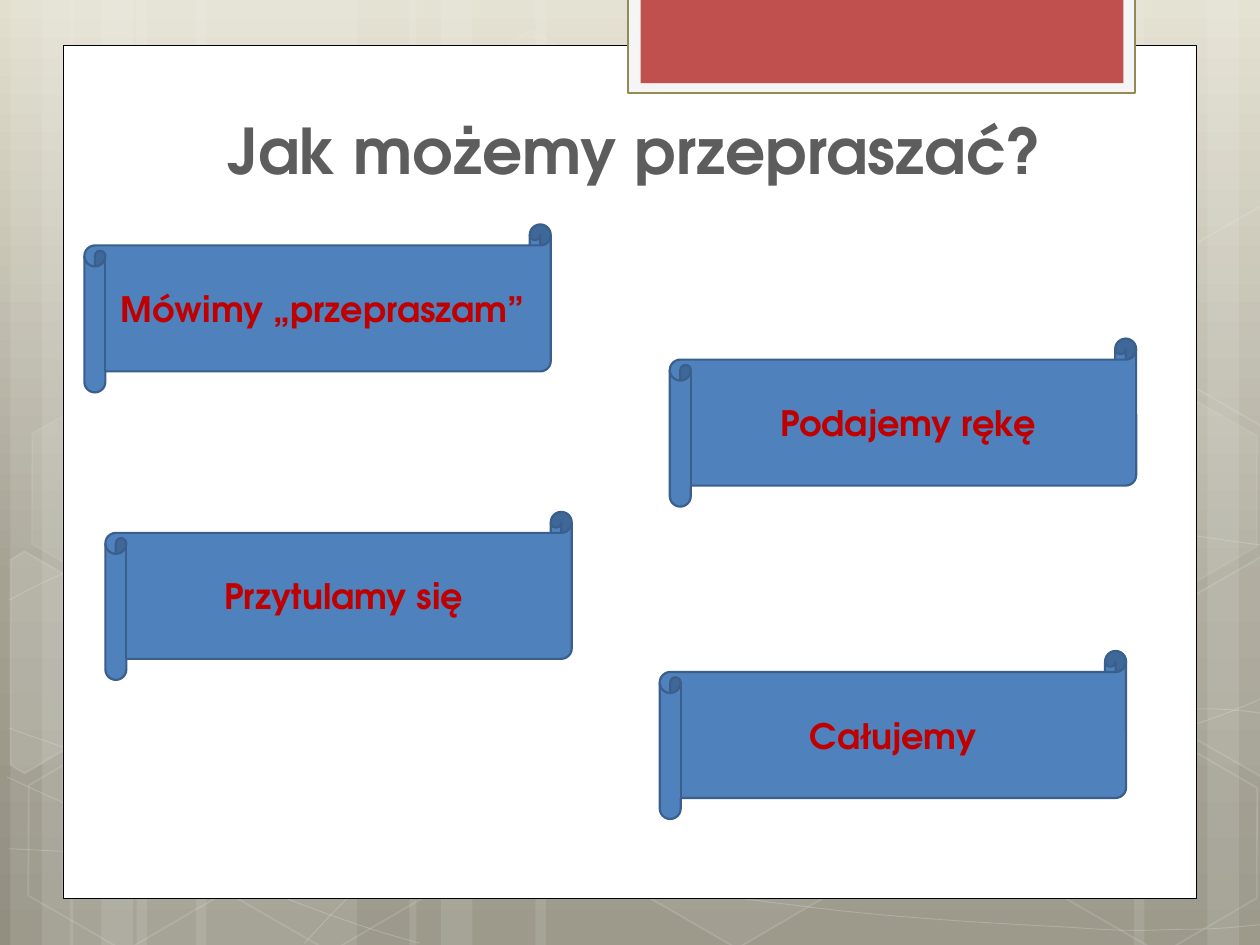
import copy
import math

import pptx
import pptx.dml.color
import pptx.enum.shapes
import pptx.enum.text
import pptx.oxml.ns
import pptx.util

Pt = pptx.util.Pt
RGB = pptx.dml.color.RGBColor
SHAPE = pptx.enum.shapes.MSO_SHAPE
TEXT = pptx.enum.text
qn = pptx.oxml.ns.qn

FONT = "TeX Gyre Adventor"
WHITE = RGB(0xFF, 0xFF, 0xFF)
BLACK = RGB(0x00, 0x00, 0x00)
PALE = RGB(0xF5, 0xF5, 0xF5)
OLIVE = RGB(0x94, 0x8A, 0x54)
BRICK = RGB(0xC0, 0x50, 0x4D)
GREY = RGB(0x5D, 0x5D, 0x5D)
BLUE = RGB(0x4F, 0x81, 0xBD)
NAVY = RGB(0x3A, 0x5F, 0x8C)
RED = RGB(0xC0, 0x00, 0x00)
SKY = [(0, RGB(0xE2, 0xDF, 0xCF)), (0.62, RGB(0xA5, 0xA2, 0x93)),
       (1, RGB(0x92, 0x8F, 0x80))]

WIDE, HIGH = 720, 540
TILT = 30

# Stripe sets: anchor edge, direction, width of the broad stripe
STRIPES = [(6, 1, 126), (40, 1, 126), (726, -1, 126), (234, 1, 222)]

# Start point, then two control points and an end point for each arc
WAVES = [
    [(5, 485), (44, 487), (83, 489), (137, 488), (191, 487), (258, 486),
     (330, 479), (402, 472), (504, 458), (570, 444), (636, 431), (703, 409),
     (725, 397)],
    [(5, 343), (26, 332), (47, 321), (87, 310), (128, 300), (186, 284),
     (250, 279), (314, 274), (392, 273), (471, 279), (550, 284), (682, 307),
     (725, 312)],
    [(4, 444), (91, 484), (178, 523), (240, 539)],
    [(5, 416), (27, 424), (50, 432), (92, 444), (134, 454), (197, 472),
     (257, 485), (317, 497), (392, 510), (452, 517), (512, 525), (576, 528),
     (614, 530), (652, 533), (662, 531), (680, 531), (699, 531), (712, 529),
     (725, 528)],
    [(174, 539), (187, 525), (200, 510), (217, 498), (235, 485), (259, 470),
     (279, 460), (300, 450), (312, 446), (338, 438), (364, 431), (413, 421),
     (438, 416), (464, 411), (467, 411), (490, 410), (512, 408), (547, 405),
     (572, 405), (597, 404), (638, 405), (638, 405), (654, 405), (670, 405),
     (686, 405), (699, 405), (711, 406), (724, 408)],
]

# Left, top, fill opacity, line opacity
CELLS = [(240.5, 26, 4, 8), (358, 424, 6, 12), (8, 425.5, 0, 12),
         (10, 224.5, 7, 8), (125.5, 426, 0, 12), (542, 326, 10, 12),
         (600.5, 427, 0, 12), (600.5, 226, 7, 8)]

# Cells cut off at the slide edge
LEFT = [(6, 320), (14, 315), (69, 347), (68, 410), (14, 442), (6, 437)]
RIGHT = [(667, 349), (721, 318), (726, 321), (726, 441), (721, 444),
         (667, 413)]

SCROLLS = [(48.25, 128.25, "Mówimy „przepraszam”"),
           (60.25, 292.5, "Przytulamy się"),
           (382.75, 193.5, "Podajemy rękę"), (377, 372, "Całujemy ")]


def fade(shape, part, pct):
    """Make the fill or line colour of a shape see-through."""
    step = {"fill": "", "line": "a:ln/"}[part]
    tint = shape._element.spPr.find(
        step + "a:solidFill/a:srgbClr",
        {"a": "http://schemas.openxmlformats.org/drawingml/2006/main"})
    tint.append(tint.makeelement(qn("a:alpha"), {"val": str(pct * 1000)}))


def style(shape, fill=None, line=None, width=1.0, clear=0, faint=0):
    """Set fill and line; clear and faint are their opacities."""
    shape.shadow.inherit = False
    if fill is None:
        shape.fill.background()
    else:
        shape.fill.solid()
        shape.fill.fore_color.rgb = fill
        if clear:
            fade(shape, "fill", clear)
    if line is None:
        shape.line.fill.background()
    else:
        shape.line.color.rgb = line
        shape.line.width = Pt(width)
        if faint:
            fade(shape, "line", faint)


def add(slide, kind, x, y, w, h, **look):
    shape = slide.shapes.add_shape(kind, Pt(x), Pt(y), Pt(w), Pt(h))
    style(shape, **look)
    return shape


def trace(slide, points, close, **look):
    """Join points given in points of length."""
    spots = [(Pt(x), Pt(y)) for x, y in points]
    pen = slide.shapes.build_freeform(*spots[0], scale=1.0)
    pen.add_line_segments(spots[1:], close=close)
    shape = pen.convert_to_shape()
    style(shape, **look)
    return shape


def wave(slide, knots):
    """Draw a chain of arcs: each three line steps become one curve."""
    shape = trace(slide, knots, False, line=WHITE, width=0.5, faint=20)
    steps = list(shape._element.iter(qn("a:lnTo")))
    for i in range(0, len(steps), 3):
        curve = steps[i].makeelement(qn("a:cubicBezTo"), {})
        steps[i].addprevious(curve)
        for step in steps[i:i + 3]:
            curve.append(step[0])
            step.getparent().remove(step)


def turn(x, y, angle):
    c, s = math.cos(math.radians(angle)), math.sin(math.radians(angle))
    return x * c - y * s, x * s + y * c


def chip(slide, points, **look):
    """Draw a cut cell upright, then tilt it into its place."""
    flat = [turn(x, y, -TILT) for x, y in points]
    shape = trace(slide, flat, True, line=WHITE, faint=12, **look)
    x, y = turn(shape.left + shape.width / 2, shape.top + shape.height / 2,
                TILT)
    shape.left = round(x - shape.width / 2)
    shape.top = round(y - shape.height / 2)
    shape.rotation = TILT


def write(frame, text, size, color):
    frame.text = text
    line = frame.paragraphs[0]
    line.alignment = TEXT.PP_ALIGN.CENTER
    font = line.runs[0].font
    font.name, font.size, font.bold = FONT, Pt(size), True
    font.color.rgb = color


def paint(slide):
    """Fill the background from light at the top to dark."""
    fill = slide.background.fill
    fill.gradient()
    fill.gradient_angle = 270
    stops = next(slide._element.iter(qn("a:gsLst")))
    stops.append(copy.deepcopy(stops[0]))
    for stop, (place, color) in zip(fill.gradient_stops, SKY):
        stop.position = place
        stop.color.rgb = color


def decor(slide):
    # Stripes
    for edge, way, broad in STRIPES:
        for gap, w in ((72, broad), (0, 36), (18, 60)):
            x = edge + gap if way > 0 else edge - gap - w
            add(slide, SHAPE.RECTANGLE, x, 0, w, HIGH, fill=WHITE, clear=10)
    # Waves
    for knots in WAVES:
        wave(slide, knots)
    # Honeycomb
    for x, y, clear, faint in CELLS:
        cell = add(slide, SHAPE.HEXAGON, x, y, 126, 109.5, line=WHITE,
                   fill=WHITE if clear else None, clear=clear, faint=faint)
        cell.adjustments[0] = 0.285
        cell.rotation = TILT
    chip(slide, LEFT, fill=WHITE, clear=10)
    chip(slide, RIGHT, fill=WHITE, clear=4)
    chip(slide, [(x, y - 200.5) for x, y in RIGHT])


def card(slide):
    box = SHAPE.RECTANGLE
    add(slide, box, 36, 26, 648, 487.25, fill=WHITE, line=BLACK, width=0.5)
    add(slide, box, 359, -1.5, 289.5, 54.5, fill=PALE, line=OLIVE, width=1.25)
    add(slide, box, 366, -1.5, 276, 49, fill=BRICK)


def head(slide, text):
    title = slide.shapes.title
    title.left, title.top = Pt(120), Pt(60)
    title.width, title.height = Pt(485.5), Pt(51)
    frame = title.text_frame
    write(frame, text, 36, GREY)
    frame.word_wrap = False
    frame.auto_size = TEXT.MSO_AUTO_SIZE.NONE
    frame.vertical_anchor = TEXT.MSO_ANCHOR.TOP
    # Bring the title in front of the card
    slide.shapes._spTree.append(title._element)


def scroll(slide, x, y, text):
    shape = add(slide, SHAPE.HORIZONTAL_SCROLL, x, y, 266.5, 96,
                fill=BLUE, line=NAVY, width=1.25)
    write(shape.text_frame, text, 20, RED)
    shape.text_frame.vertical_anchor = TEXT.MSO_ANCHOR.MIDDLE


def main():
    deck = pptx.Presentation()
    deck.slide_width, deck.slide_height = Pt(WIDE), Pt(HIGH)
    slide = deck.slides.add_slide(deck.slide_layouts[5])
    paint(slide)
    decor(slide)
    card(slide)
    head(slide, "Jak możemy przepraszać?")
    for x, y, text in SCROLLS:
        scroll(slide, x, y, text)
    deck.save("out.pptx")


if __name__ == "__main__":
    main()
